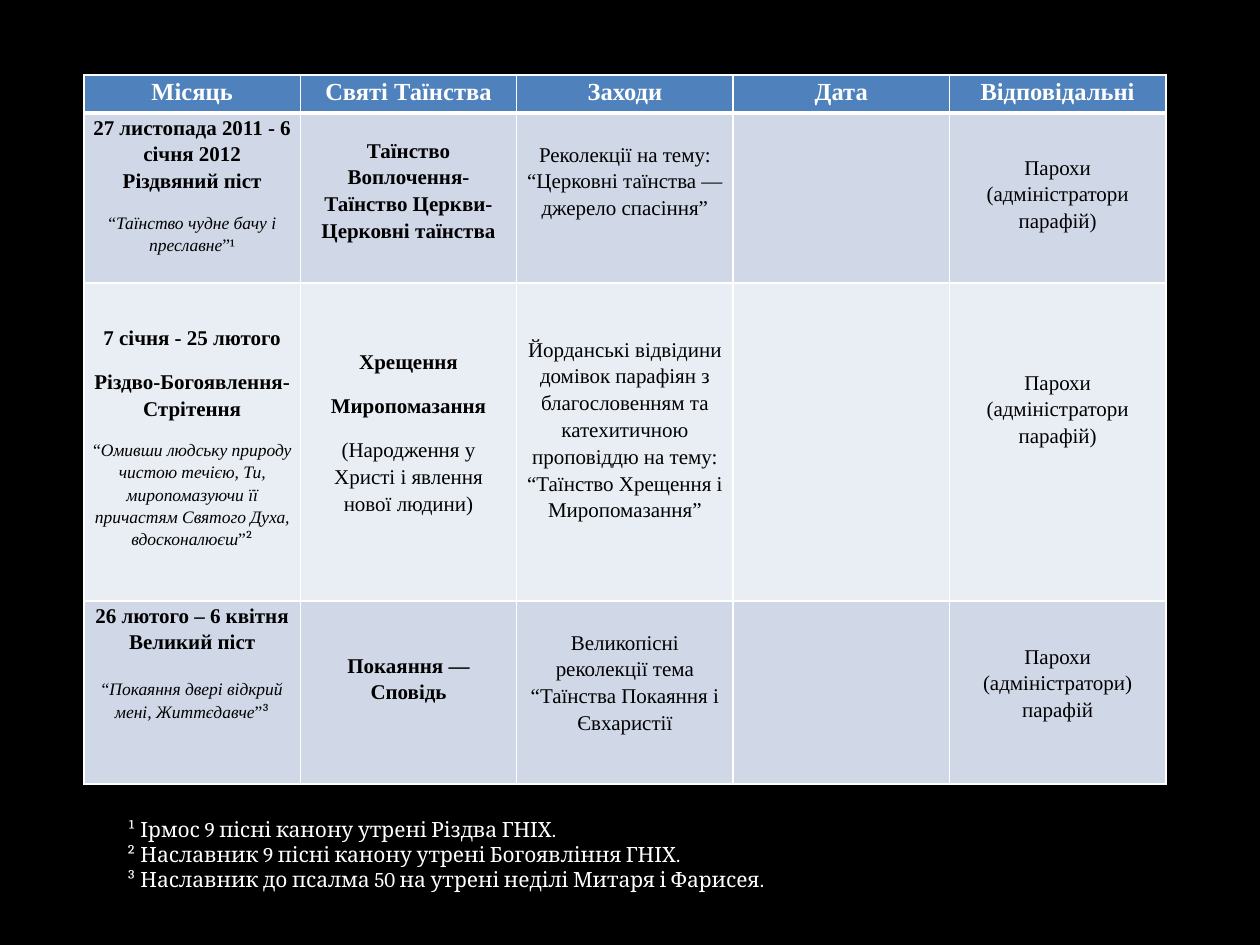
from lxml.etree import SubElement
from pptx import Presentation
from pptx.dml.color import RGBColor
from pptx.enum.text import PP_ALIGN
from pptx.oxml.ns import qn
from pptx.util import Pt

EMU_PER_PX = 914400 // 126
SERIF, NOTE_FONT = "Times New Roman", "Cambria"
WHITE, BLACK, HEADER_BLUE = "FFFFFF", "000000", "4F81BD"
ROW_FILLS = ["D0D8E8", "E9EDF4"]
ROW_HEIGHTS = [38, 170, 318, 183]
GAP = 10

HEADERS = ["Місяць", "Святі Таїнства", "Заходи", "Дата", "Відповідальні"]


def px(n):
    return n * EMU_PER_PX


def color(value):
    return RGBColor.from_string(value)


def style(r, size, name=SERIF, fill=BLACK, bold=False, italic=False):
    r.font.size = Pt(size)
    r.font.name = name
    r.font.color.rgb = color(fill)
    r.font.bold = bold
    r.font.italic = italic


def para(text, bold=False, after=GAP):
    def write(p):
        p.text = text
        p.space_after = Pt(after)
        for r in p.runs:
            style(r, 12, bold=bold)
    return write


def strong(text, after=GAP):
    return para(text, True, after)


def quote(text, mark, mark_font=NOTE_FONT):
    def write(p):
        p.space_after = Pt(GAP)
        parts = [("“", SERIF), (text, SERIF), ("”", SERIF), (mark, mark_font)]
        for part, name in parts:
            r = p.add_run()
            r.text = part
            style(r, 10, name, italic=part == text)
    return write


PARISH_PRIESTS = para("Парохи (адміністратори парафій)")

ROWS = [
    [
        (0, [strong("27 листопада 2011 - 6 січня 2012\nРіздвяний піст"),
             quote("Таїнство чудне бачу і преславне", "¹", SERIF)]),
        (23, [strong("Таїнство Воплочення-Таїнство Церкви-Церковні таїнства")]),
        (27, [para("Реколекції на тему: “Церковні таїнства — джерело спасіння”")]),
        (0, []),
        (40, [PARISH_PRIESTS]),
    ],
    [
        (40, [strong("7 січня - 25 лютого"),
              strong("Різдво-Богоявлення-Стрітення"),
              quote("Омивши людську природу чистою течією, Ти, миропомазуючи її "
                    "причастям Святого Духа, вдосконалюєш", "²")]),
        (64, [strong("Хрещення"), strong("Миропомазання"),
              para("(Народження у Христі і явлення нової людини)")]),
        (52, [para("Йорданські відвідини домівок парафіян з благословенням та "
                   "катехитичною проповіддю на тему: “Таїнство Хрещення і "
                   "Миропомазання”")]),
        (0, []),
        (85, [PARISH_PRIESTS]),
    ],
    [
        (0, [strong("26 лютого – 6 квітня", 0), strong("Великий піст", 13),
             quote("Покаяння двері відкрий мені, Життєдавче", "³")]),
        (50, [strong("Покаяння — Сповідь")]),
        (27, [para("Великопісні реколекції тема “Таїнства Покаяння і Євхаристії")]),
        (0, []),
        (41, [para("Парохи (адміністратори) парафій")]),
    ],
]

FOOTNOTES = [
    "¹ Ірмос 9 пісні канону утрені Різдва ГНІХ.",
    "² Наславник 9 пісні канону утрені Богоявління ГНІХ.",
    "³ Наславник до псалма 50 на утрені неділі Митаря і Фарисея.",
]


def header(text):
    def write(p):
        p.text = text
        p.space_after = Pt(GAP)
        style(p.runs[0], 14, fill=WHITE, bold=True)
    return write


def border(cell, top=1, bottom=1):
    tc_pr = cell._tc.get_or_add_tcPr()
    for side, width in zip("LRTB", [1, 1, top, bottom]):
        ln = SubElement(tc_pr, qn(f"a:ln{side}"), w=str(Pt(width)))
        SubElement(SubElement(ln, qn("a:solidFill")), qn("a:srgbClr"), val=WHITE)


def fill_cell(cell, fill, top, paragraphs):
    cell.fill.solid()
    cell.fill.fore_color.rgb = color(fill)
    cell.margin_left = cell.margin_right = px(9)
    cell.margin_top, cell.margin_bottom = px(top), 0
    tf = cell.text_frame
    for i, write in enumerate(paragraphs):
        p = tf.add_paragraph() if i else tf.paragraphs[0]
        p.alignment = PP_ALIGN.CENTER
        p.line_spacing = 1.15
        write(p)


def add_schedule(s, x, y, w):
    rows = [[(0, [header(text)]) for text in HEADERS]] + ROWS
    frame = s.shapes.add_table(len(rows), len(HEADERS), px(x), px(y),
                               px(w), px(sum(ROW_HEIGHTS)))
    table = frame.table
    for column in table.columns:
        column.width = px(w) // len(HEADERS)
    for i, row in enumerate(rows):
        table.rows[i].height = px(ROW_HEIGHTS[i])
        fill = ROW_FILLS[(i - 1) % 2] if i else HEADER_BLUE
        for j, (top, paragraphs) in enumerate(row):
            cell = table.cell(i, j)
            border(cell, top=3 if i == 1 else 1, bottom=3 if i == 0 else 1)
            fill_cell(cell, fill, top, paragraphs)


def add_footnotes(s, x, y, w, h):
    tf = s.shapes.add_textbox(px(x), px(y), px(w), px(h)).text_frame
    tf.word_wrap = True
    tf.text = "\n".join(FOOTNOTES)
    for p in tf.paragraphs:
        style(p.runs[0], 12, NOTE_FONT, WHITE)


def main():
    prs = Presentation()
    prs.slide_width, prs.slide_height = px(1260), px(945)
    s = prs.slides.add_slide(prs.slide_layouts[6])
    s.background.fill.solid()
    s.background.fill.fore_color.rgb = color(BLACK)
    add_schedule(s, 84, 75, 1082)
    add_footnotes(s, 115, 810, 1022, 89)
    prs.save("out.pptx")


if __name__ == "__main__":
    main()
